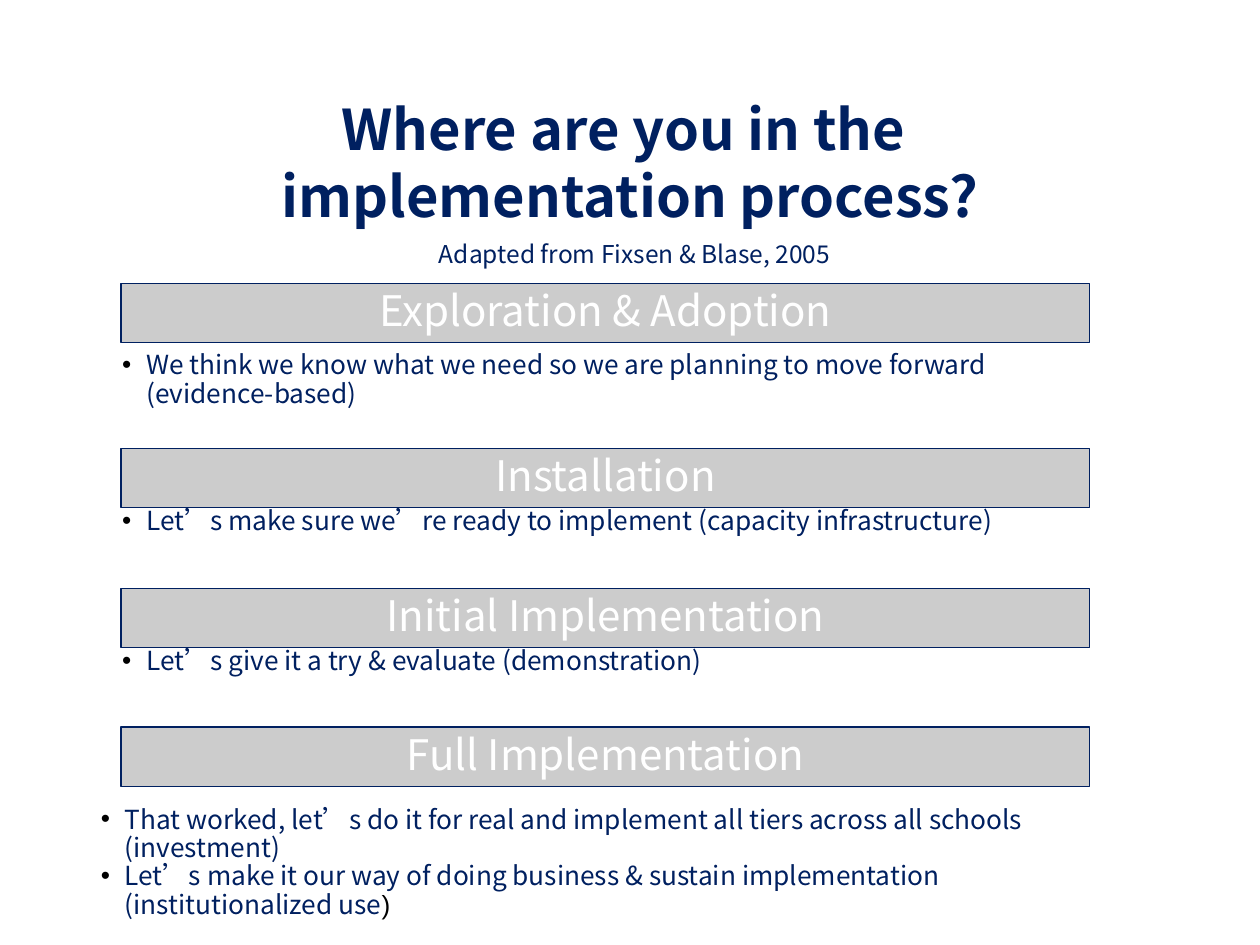
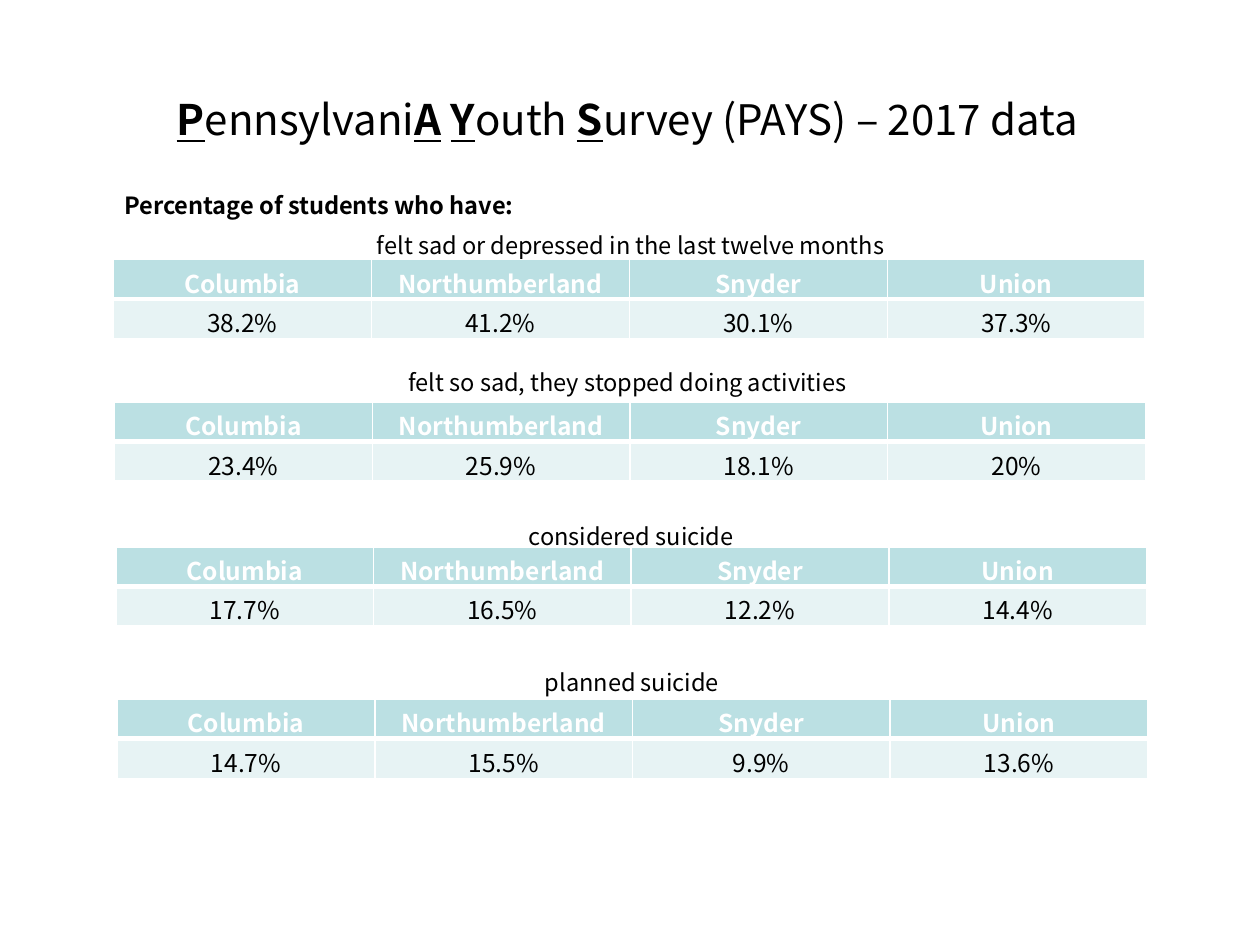
import lxml.etree
import pptx
import pptx.dml.color
import pptx.enum.shapes
import pptx.enum.text
import pptx.oxml
import pptx.oxml.ns
import pptx.util

PX = 9144
FONT = "Noto Sans CJK SC"
NAVY, BLACK, WHITE, GREY = "002060", "000000", "FFFFFF", "CCCCCC"
HEADER_TEAL, VALUE_TEAL = "BBE0E3", "E7F3F4"
CENTER = pptx.enum.text.PP_ALIGN.CENTER
LEFT = pptx.enum.text.PP_ALIGN.LEFT
MIDDLE = pptx.enum.text.MSO_ANCHOR.MIDDLE
TOP = pptx.enum.text.MSO_ANCHOR.TOP

STAGES = [
    ("Exploration & Adoption", 225, (27, 244, 891, 95), [
        "We think we know what we need so we are planning to move forward (evidence-based)"]),
    ("Installation", 356, (27, 379, 920, 87), [
        "Let’s make sure we’re ready to implement (capacity infrastructure)"]),
    ("Initial Implementation", 467, (27, 490, 874, 85), [
        "Let’s give it a try & evaluate (demonstration)"]),
    ("Full Implementation", 577, (10, 601, 975, 150), [
        "That worked, let’s do it for real and implement all tiers across all schools (investment)",
        "Let’s make it our way of doing business & sustain implementation (institutionalized use"]),
]

COUNTIES = ["Columbia", "Northumberland", "Snyder", "Union"]
QUESTIONS = [
    ("felt sad or depressed in the last twelve months", (91, 178, 819, 56),
     (90, 206, 819, 62), ["38.2%", "41.2%", "30.1%", "37.3%"]),
    ("felt so sad, they stopped doing activities", (89, 287, 818, 33),
     (91, 319, 818, 62), ["23.4%", "25.9%", "18.1%", "20%"]),
    ("considered suicide", (92, 409, 818, 56),
     (92, 434, 818, 62), ["17.7%", "16.5%", "12.2%", "14.4%"]),
    ("planned suicide", (92, 525, 819, 56),
     (93, 555, 818, 62), ["14.7%", "15.5%", "9.9%", "13.6%"]),
]


def emu(lengths):
    """Turn px lengths into EMU."""
    return [length * PX for length in lengths]


def color(value):
    """Turn a hex string into a colour."""
    return pptx.dml.color.RGBColor.from_string(value)


def style(font, size, ink, bold=False, name=FONT):
    """Set the look of a paragraph or span."""
    font.name, font.size, font.bold = name, pptx.util.Pt(size), bold
    font.color.rgb = color(ink)


def set_frame(frame, insets, anchor):
    """Set wrapping, insets and anchor of a text frame."""
    frame.word_wrap = True
    frame.vertical_anchor = anchor
    (frame.margin_left, frame.margin_top,
     frame.margin_right, frame.margin_bottom) = emu(insets)


def add_text(page, box, text, size, ink, bold=False, align=CENTER, anchor=TOP):
    """Add a text box and return its first paragraph."""
    frame = page.shapes.add_textbox(*emu(box)).text_frame
    set_frame(frame, (10, 5, 10, 5), anchor)
    para = frame.paragraphs[0]
    para.text, para.alignment = text, align
    style(para.font, size, ink, bold)
    return para


def add_span(para, text):
    """Append a run to a paragraph and return it."""
    span = para.add_run()
    span.text = text
    return span


def add_stage_bar(page, box, label):
    """Add the grey bar that names a stage."""
    bar = page.shapes.add_shape(pptx.enum.shapes.MSO_SHAPE.RECTANGLE, *emu(box))
    bar.shadow.inherit = False
    bar.fill.solid()
    bar.fill.fore_color.rgb = color(GREY)
    bar.line.color.rgb = color(NAVY)
    bar.line.width = pptx.util.Pt(0.75)
    set_frame(bar.text_frame, (24, 0, 24, 0), MIDDLE)
    para = bar.text_frame.paragraphs[0]
    para.text, para.alignment, para.line_spacing = label, CENTER, 0.9
    style(para.font, 24, WHITE)


def add_bullet(para):
    """Give a paragraph a hanging black bullet."""
    props = para._p.get_or_add_pPr()
    props.set("marL", str(19 * PX))
    props.set("indent", str(-19 * PX))
    ink = lxml.etree.SubElement(props, pptx.oxml.ns.qn("a:buClr"))
    lxml.etree.SubElement(ink, pptx.oxml.ns.qn("a:srgbClr"), val=BLACK)
    lxml.etree.SubElement(props, pptx.oxml.ns.qn("a:buFont"), typeface="Arial")
    lxml.etree.SubElement(props, pptx.oxml.ns.qn("a:buChar"), char="•")


def add_details(page, box, details):
    """Add the bulleted lines under a stage bar and return the last one."""
    frame = page.shapes.add_textbox(*emu(box)).text_frame
    set_frame(frame, (70, 39, 70, 13), TOP)
    for index, detail in enumerate(details):
        para = frame.add_paragraph() if index else frame.paragraphs[0]
        para.text, para.level, para.line_spacing = detail, 1, 0.9
        add_bullet(para)
        style(para.font, 15, NAVY)
    return para


def build_stages(page):
    """Build the slide of implementation stages."""
    title = add_text(page, (0, 81, 1000, 128),
                     "Where are you in the \vimplementation process?\v",
                     32, NAVY, bold=True, anchor=MIDDLE)
    style(add_span(title, " ").font, 20, "3A54A5", name="Arial")
    style(add_span(title, "Adapted from Fixsen & Blase, 2005").font, 14, NAVY)
    for label, top, box, details in STAGES:
        last = add_details(page, box, details)
        add_stage_bar(page, (96, top, 769, 47), label)
    style(add_span(last, ")").font, 15, BLACK, name="Arial")


def add_borders(cell, top, bottom):
    """Draw white borders round a cell, with widths in points."""
    props = cell._tc.get_or_add_tcPr()
    for side, width in zip("LRTB", (1, 1, top, bottom)):
        line = lxml.etree.SubElement(props, pptx.oxml.ns.qn(f"a:ln{side}"),
                                     w=str(pptx.util.Pt(width)))
        fill = lxml.etree.SubElement(line, pptx.oxml.ns.qn("a:solidFill"))
        lxml.etree.SubElement(fill, pptx.oxml.ns.qn("a:srgbClr"), val=WHITE)


def fill_row(table, index, texts, fill, ink, bold, borders):
    """Write and colour one table row."""
    for column, text in enumerate(texts):
        cell = table.cell(index, column)
        cell.margin_left = cell.margin_right = 7 * PX
        cell.margin_top = cell.margin_bottom = 4 * PX
        add_borders(cell, *borders)
        cell.fill.solid()
        cell.fill.fore_color.rgb = color(fill)
        para = cell.text_frame.paragraphs[0]
        para.text, para.alignment = text, CENTER
        style(para.font, 14, ink, bold)


def add_county_table(page, box, values):
    """Add a table of one value per county."""
    table = page.shapes.add_table(2, len(COUNTIES), *emu(box)).table
    fill_row(table, 0, COUNTIES, HEADER_TEAL, WHITE, True, (1, 3))
    fill_row(table, 1, values, VALUE_TEAL, BLACK, False, (3, 1))


def build_survey(page):
    """Build the slide of survey tables."""
    title = add_text(page, (-2, 69, 1000, 50), "", 24, BLACK)
    parts = ["P", "ennsylvani", "A", " ", "Y", "outh ", "S", "urvey (PAYS) – 2017 data"]
    for index, part in enumerate(parts):
        font = add_span(title, part).font
        font.bold = font.underline = index % 2 == 0
    add_text(page, (89, 147, 704, 33), "Percentage of students who have:",
             13.5, BLACK, bold=True, align=LEFT)
    for caption, caption_box, table_box, values in QUESTIONS:
        add_text(page, caption_box, caption, 13.5, BLACK)
        add_county_table(page, table_box, values)


def main():
    """Build and save the deck."""
    deck = pptx.Presentation()
    deck.slide_width, deck.slide_height = emu((1000, 750))
    for build in (build_stages, build_survey):
        build(deck.slides.add_slide(deck.slide_layouts[6]))
    deck.save("out.pptx")


if __name__ == "__main__":
    main()
